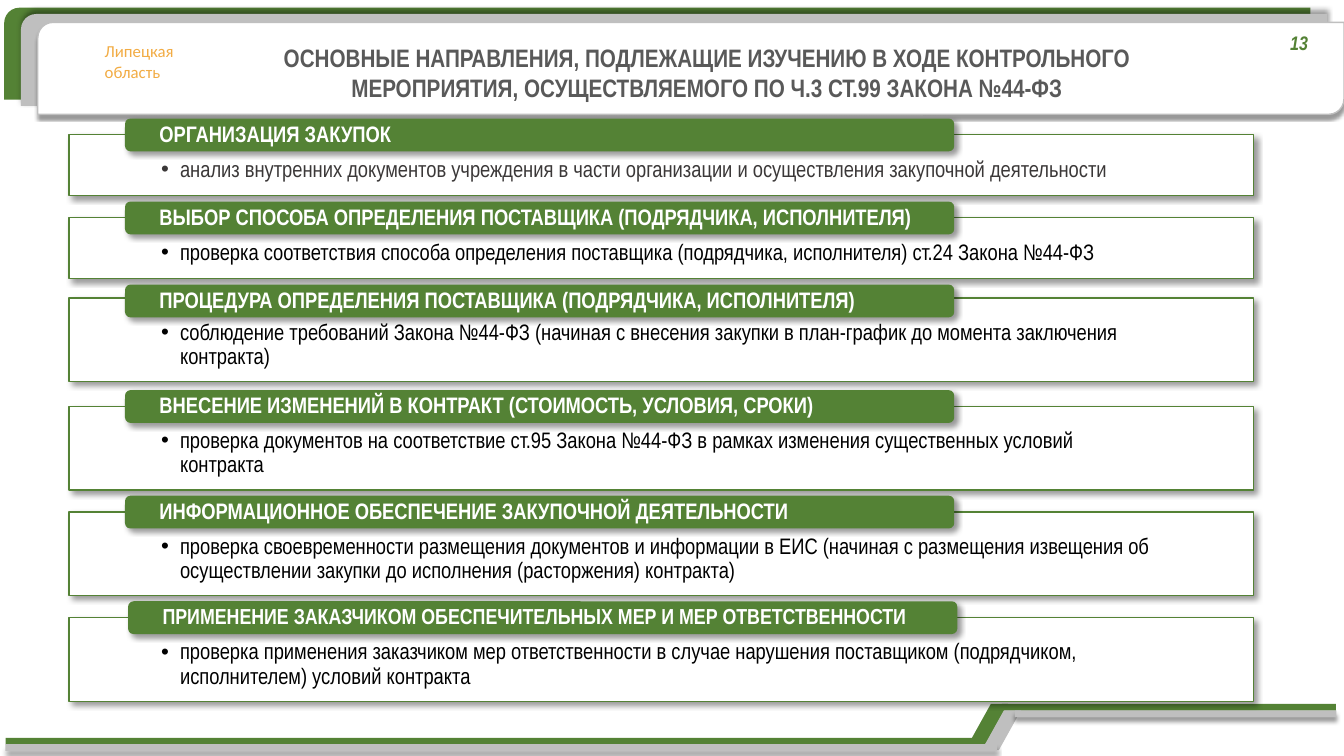
from lxml import etree
from pptx import Presentation
from pptx import util as u
from pptx.dml.color import RGBColor
from pptx.enum import shapes, text
from pptx.oxml import ns

Pt = u.Pt
GREEN = RGBColor(0x54, 0x82, 0x35)
GRAY = RGBColor(0xBF, 0xBF, 0xBF)
WHITE = RGBColor(0xFF, 0xFF, 0xFF)
BLACK = RGBColor(0, 0, 0)
DARK = RGBColor(0x3B, 0x38, 0x38)
TITLE = RGBColor(0x59, 0x59, 0x59)
ORANGE = RGBColor(0xF2, 0xAC, 0x44)
NARROW = "Arial Narrow"
RECT = shapes.MSO_SHAPE.RECTANGLE
DIAGONAL = shapes.MSO_SHAPE.ROUND_2_DIAG_RECTANGLE
ROUNDED = shapes.MSO_SHAPE.ROUNDED_RECTANGLE

HEADING = "ОСНОВНЫЕ НАПРАВЛЕНИЯ, ПОДЛЕЖАЩИЕ ИЗУЧЕНИЮ В ХОДЕ КОНТРОЛЬНОГО МЕРОПРИЯТИЯ, ОСУЩЕСТВЛЯЕМОГО ПО Ч.3 СТ.99 ЗАКОНА №44-ФЗ"
SECTIONS = [
    dict(top=96.3, height=43.2, tab_top=84.7, color=DARK, name="ОРГАНИЗАЦИЯ ЗАКУПОК",
         body="анализ внутренних документов учреждения в части организации и осуществления закупочной деятельности"),
    dict(top=155.6, height=43.2, tab_top=144, name="ВЫБОР СПОСОБА ОПРЕДЕЛЕНИЯ ПОСТАВЩИКА (ПОДРЯДЧИКА, ИСПОЛНИТЕЛЯ)",
         body="проверка соответствия способа определения поставщика (подрядчика, исполнителя) ст.24 Закона №44-ФЗ"),
    dict(top=212.9, tab_top=203.3, name="ПРОЦЕДУРА ОПРЕДЕЛЕНИЯ ПОСТАВЩИКА (ПОДРЯДЧИКА, ИСПОЛНИТЕЛЯ)",
         body="соблюдение требований Закона №44-ФЗ (начиная с внесения закупки в план-график до момента заключения контракта)"),
    dict(top=290.3, tab_top=278.7, name="ВНЕСЕНИЕ ИЗМЕНЕНИЙ В КОНТРАКТ (СТОИМОСТЬ, УСЛОВИЯ, СРОКИ)",
         body="проверка документов на соответствие ст.95 Закона №44-ФЗ в рамках изменения существенных условий контракта"),
    dict(top=365.7, tab_top=354.1, name="ИНФОРМАЦИОННОЕ ОБЕСПЕЧЕНИЕ ЗАКУПОЧНОЙ ДЕЯТЕЛЬНОСТИ",
         body="проверка своевременности размещения документов и информации в ЕИС (начиная с размещения извещения об осуществлении закупки до исполнения (расторжения) контракта)"),
    dict(top=441.2, tab_top=429.5, tab_left=91.5, size=15.5,
         name="ПРИМЕНЕНИЕ ЗАКАЗЧИКОМ ОБЕСПЕЧИТЕЛЬНЫХ МЕР И МЕР ОТВЕТСТВЕННОСТИ",
         body="проверка применения заказчиком мер ответственности в случае нарушения поставщиком (подрядчиком, исполнителем) условий контракта"),
]


def set_all(obj, values):
    """Set each attribute named in a dict."""
    for name, value in values.items():
        setattr(obj, name, value)


def format_font(p, size, color, name=NARROW, **flags):
    """Format the font of a paragraph's runs."""
    for r in p.runs:
        set_all(r.font, dict(size=Pt(size), name=name, **flags))
        r.font.color.rgb = color


def paint(sp, fill, line=None):
    """Give a shape a solid fill and an optional one-point outline."""
    sp.shadow.inherit = False
    sp.fill.solid()
    sp.fill.fore_color.rgb = fill
    if line is None:
        sp.line.fill.background()
    else:
        sp.line.color.rgb = line
        sp.line.width = Pt(1)


def add_shadow(sp, blur, dist, angle):
    """Put a 40% black outer shadow on a painted shape."""
    effects = sp.element.spPr.find(ns.qn("a:effectLst"))
    shadow = etree.SubElement(effects, ns.qn("a:outerShdw"), blurRad=str(Pt(blur)),
                              dist=str(Pt(dist)), dir=str(angle * 60000), algn="ctr", rotWithShape="0")
    color = etree.SubElement(shadow, ns.qn("a:srgbClr"), val="000000")
    etree.SubElement(color, ns.qn("a:alpha"), val="40000")


def add_block(s, kind, box, fill, line=None, shadow=None):
    """Add a filled preset shape."""
    sp = s.shapes.add_shape(kind, *map(Pt, box))
    paint(sp, fill, line)
    if shadow:
        add_shadow(sp, *shadow)
    return sp


def add_slant(s, left, top, fill):
    """Add the slanted joint of a footer band."""
    points = [(Pt(left + dx), Pt(top + dy)) for dx, dy in ((0, 28.4), (15.8, 0), (28, 0), (12.2, 28.4))]
    builder = s.shapes.build_freeform(*points[0], scale=1.0)
    builder.add_line_segments(points[1:], close=True)
    paint(builder.convert_to_shape(), fill)


def add_label(s, box, lines, wrap, **font):
    """Add a plain text box with one paragraph per line."""
    tf = s.shapes.add_textbox(*map(Pt, box)).text_frame
    tf.word_wrap = wrap
    tf.text = "\n".join(lines)
    for p in tf.paragraphs:
        format_font(p, **font)


def fill_text(sp, content, margins, anchor):
    """Write one left-aligned paragraph into a shape."""
    tf = sp.text_frame
    sides = ("margin_left", "margin_top", "margin_right", "margin_bottom")
    set_all(tf, dict(zip(sides, map(Pt, margins)), word_wrap=True, vertical_anchor=anchor))
    p = tf.paragraphs[0]
    p.text = content
    set_all(p, dict(alignment=text.PP_ALIGN.LEFT, line_spacing=0.9))
    return p


def add_bullet(p, indent):
    """Give a paragraph a hanging round bullet."""
    pPr = p._p.get_or_add_pPr()
    set_all(pPr, {})
    pPr.set("marL", str(Pt(indent)))
    pPr.set("indent", str(-Pt(indent)))
    etree.SubElement(pPr, ns.qn("a:buFont"), typeface="Arial")
    etree.SubElement(pPr, ns.qn("a:buChar"), char="•")


def add_section(s, name, body, top, tab_top, height=59.8, tab_left=89.3, color=BLACK, size=16):
    """Add an outlined panel with its green heading tab."""
    shadow = (4, 3, 45)
    panel = add_block(s, RECT, (49.4, top, 846, height), WHITE, GREEN, shadow)
    p = fill_text(panel, body, (65.7, 16.4, 65.7, 8.5), text.MSO_ANCHOR.TOP)
    add_bullet(p, 13.5)
    format_font(p, 16, color)
    tab = add_block(s, ROUNDED, (tab_left, tab_top, 592.3, 23.4), GREEN, shadow=shadow)
    p = fill_text(tab, name, (23.5, 0, 23.5, 0), text.MSO_ANCHOR.MIDDLE)
    format_font(p, size, WHITE, bold=True)


def add_header(s):
    """Add the layered header plates and the region label."""
    add_block(s, DIAGONAL, (3, 5.5, 933, 65.7), GREEN)
    add_block(s, DIAGONAL, (15, 10, 933, 65.7), GRAY, shadow=(4, 3, 270))
    add_block(s, DIAGONAL, (27, 16, 933, 65.7), WHITE, GRAY, (2, 3, 90))
    add_label(s, (67.7, 25.9, 65.5, 36), ("Липецкая", "область"), True, size=12, color=ORANGE, name="Calibri")


def add_footer(s):
    """Add the green and gray stepped bands."""
    add_slant(s, 692, 502.8, GREEN)
    add_block(s, RECT, (4, 527, 700, 4.8), GREEN)
    add_block(s, RECT, (715.7, 502.8, 238.5, 4.8), GREEN)
    add_slant(s, 701.3, 507.5, GRAY)
    add_block(s, RECT, (3.8, 531.5, 708.3, 4.8), GRAY, shadow=(3, 3, 90))
    add_block(s, RECT, (725, 507.5, 229.7, 4.8), GRAY, shadow=(3, 3, 90))


def set_title(s):
    """Place and format the title above the header plates."""
    sp = s.shapes.title
    set_all(sp, dict(left=Pt(136), top=Pt(26.8), width=Pt(738), height=Pt(51)))
    tf = sp.text_frame
    tf.text = HEADING
    set_all(tf, dict(word_wrap=True, vertical_anchor=text.MSO_ANCHOR.TOP, auto_size=text.MSO_AUTO_SIZE.NONE))
    p = tf.paragraphs[0]
    p.alignment = text.PP_ALIGN.CENTER
    format_font(p, 18, TITLE, bold=True)
    sp.element.getparent().append(sp.element)


def main():
    """Build the slide and save it."""
    prs = Presentation()
    set_all(prs, dict(slide_width=Pt(960), slide_height=Pt(540)))
    s = prs.slides.add_slide(prs.slide_layouts[5])
    add_header(s)
    add_footer(s)
    set_title(s)
    for section in SECTIONS:
        add_section(s, **section)
    add_label(s, (914.4, 18.2, 27.4, 24.2), ("13",), False, size=14, color=GREEN, bold=True, italic=True)
    prs.save("out.pptx")


if __name__ == "__main__":
    main()
